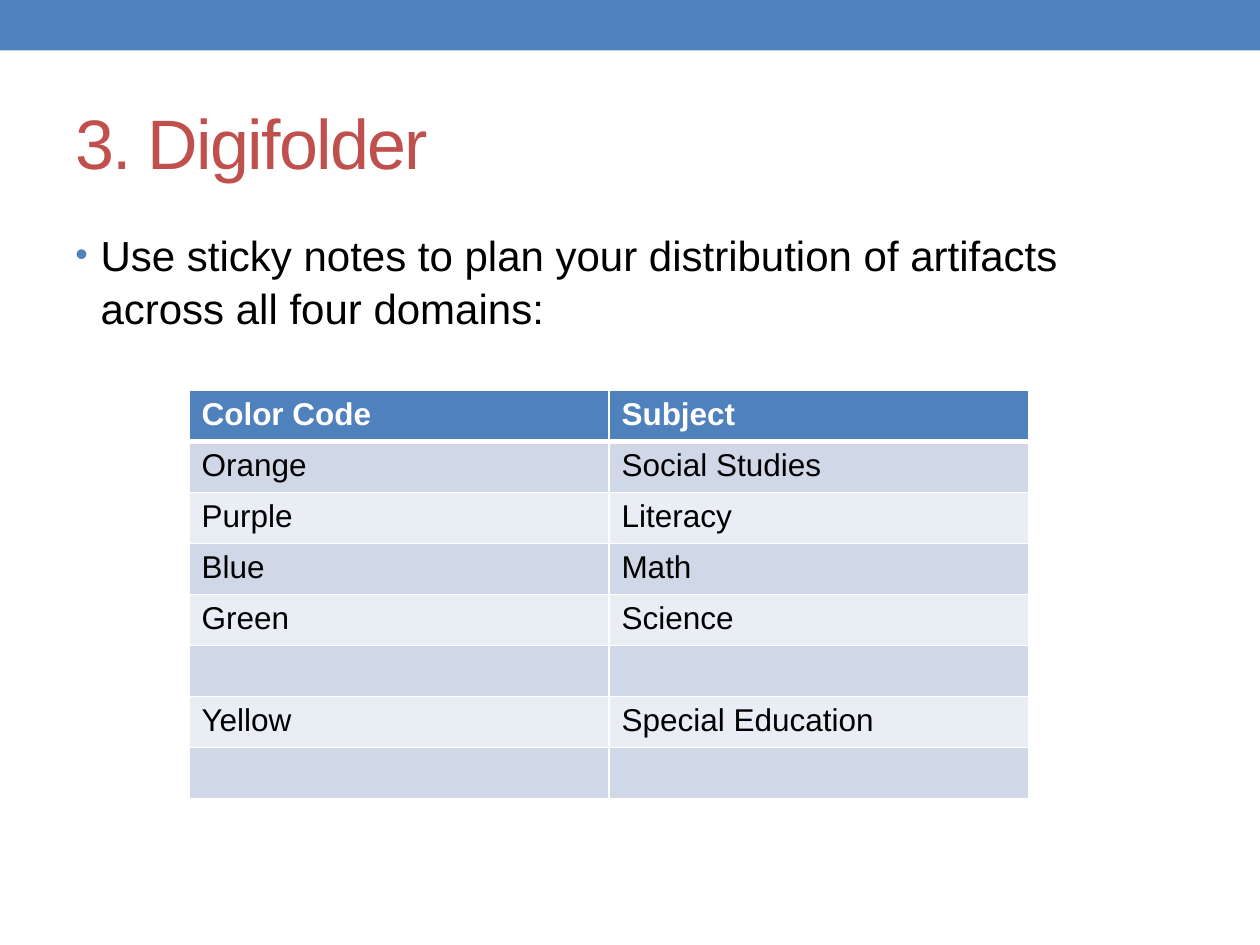
from dataclasses import dataclass

from lxml import etree
from pptx import Presentation
from pptx.dml.color import RGBColor
from pptx.enum import shapes, text
from pptx.oxml import ns
from pptx.util import Pt


@dataclass(frozen=True)
class Theme:
    font: str = "Arial"
    accent: str = "4F81BD"
    heading: str = "C0504D"
    ink: str = "000000"
    paper: str = "FFFFFF"
    bands: tuple = ("D0D8E8", "E9EDF4")
    title_size: int = 40
    body_size: int = 24
    cell_size: int = 18


THEME = Theme()
SUBJECTS = [
    ("Color Code", "Subject"),
    ("Orange", "Social Studies"),
    ("Purple", "Literacy"),
    ("Blue", "Math"),
    ("Green", "Science"),
    ("", ""),
    ("Yellow", "Special Education"),
    ("", ""),
]


def paint(item, color):
    item.fill.solid()
    item.fill.fore_color.rgb = RGBColor.from_string(color)


def write(paragraph, words, size, color, bold=False):
    paragraph.text = words
    formats = {"name": THEME.font, "size": Pt(size), "bold": bold}
    for attribute, value in formats.items():
        setattr(paragraph.font, attribute, value)
    paragraph.font.color.rgb = RGBColor.from_string(color)
    for run in paragraph.runs:
        for attribute, value in formats.items():
            setattr(run.font, attribute, value)
        run.font.color.rgb = RGBColor.from_string(color)


def add_child(parent, tag, **attributes):
    child = etree.SubElement(parent, ns.qn(tag))
    for name, value in attributes.items():
        child.set(name, str(value))
    return child


def add_frame(slide, box, anchor):
    frame = slide.shapes.add_textbox(*map(Pt, box)).text_frame
    frame.word_wrap = True
    frame.vertical_anchor = anchor
    return frame


def add_top_band(slide, box):
    band = slide.shapes.add_shape(shapes.MSO_SHAPE.RECTANGLE, *map(Pt, box))
    band.shadow.inherit = False
    band.line.fill.background()
    paint(band, THEME.accent)


def add_title(slide, box, words):
    heading = add_frame(slide, box, text.MSO_ANCHOR.MIDDLE).paragraphs[0]
    write(heading, words, THEME.title_size, THEME.heading)
    heading.runs[0].font._element.set("spc", "-100")


def add_instruction(slide, box, words):
    instruction = add_frame(slide, box, text.MSO_ANCHOR.TOP).paragraphs[0]
    write(instruction, words, THEME.body_size, THEME.ink)
    instruction.space_before = Pt(4.8)
    instruction.line_spacing = 1.05
    properties = instruction._p.get_or_add_pPr()
    indent = Pt(14.4)
    properties.set("marL", str(indent))
    properties.set("indent", str(-indent))
    # The schema wants the bullet's parts ahead of the default run format.
    defaults = properties.find(ns.qn("a:defRPr"))
    add_child(add_child(properties, "a:buClr"), "a:srgbClr", val=THEME.accent)
    add_child(properties, "a:buSzPct", val=85000)
    add_child(properties, "a:buFont", typeface=THEME.font)
    add_child(properties, "a:buChar", char="•")
    properties.append(defaults)


def add_borders(cell, widths):
    """Draw the borders; call before filling, as the schema wants lines first."""
    properties = cell._tc.get_or_add_tcPr()
    for side, width in widths.items():
        line = add_child(properties, f"a:ln{side}", w=Pt(width))
        add_child(add_child(line, "a:solidFill"), "a:srgbClr", val=THEME.paper)


def add_subject_table(slide, box, rows):
    left, top, width, height = box
    columns = len(rows[0])
    table = slide.shapes.add_table(len(rows), columns, *map(Pt, box)).table
    for column in table.columns:
        column.width = Pt(width / columns)
    for index, labels in enumerate(rows):
        header = index == 0
        table.rows[index].height = Pt(height / len(rows))
        widths = {"L": 1, "R": 1, "T": 3 if index == 1 else 1, "B": 3 if header else 1}
        background = THEME.accent if header else THEME.bands[(index - 1) % 2]
        ink = THEME.paper if header else THEME.ink
        for cell, label in zip(table.rows[index].cells, labels):
            add_borders(cell, widths)
            paint(cell, background)
            write(cell.text_frame.paragraphs[0], label, THEME.cell_size, ink, header)


def main():
    deck = Presentation()
    deck.slide_width, deck.slide_height = Pt(720), Pt(540)
    slide = deck.slides.add_slide(deck.slide_layouts[6])
    paint(slide.background, THEME.paper)
    add_top_band(slide, (0, 0, 720, 28.8))
    add_title(slide, (36, 42, 648, 78), "3. Digifolder")
    add_instruction(
        slide,
        (36, 126, 648, 384),
        "Use sticky notes to plan your distribution of artifacts across all four domains:",
    )
    add_subject_table(slide, (108, 223.2, 480, 233.28), SUBJECTS)
    deck.save("out.pptx")


if __name__ == "__main__":
    main()
